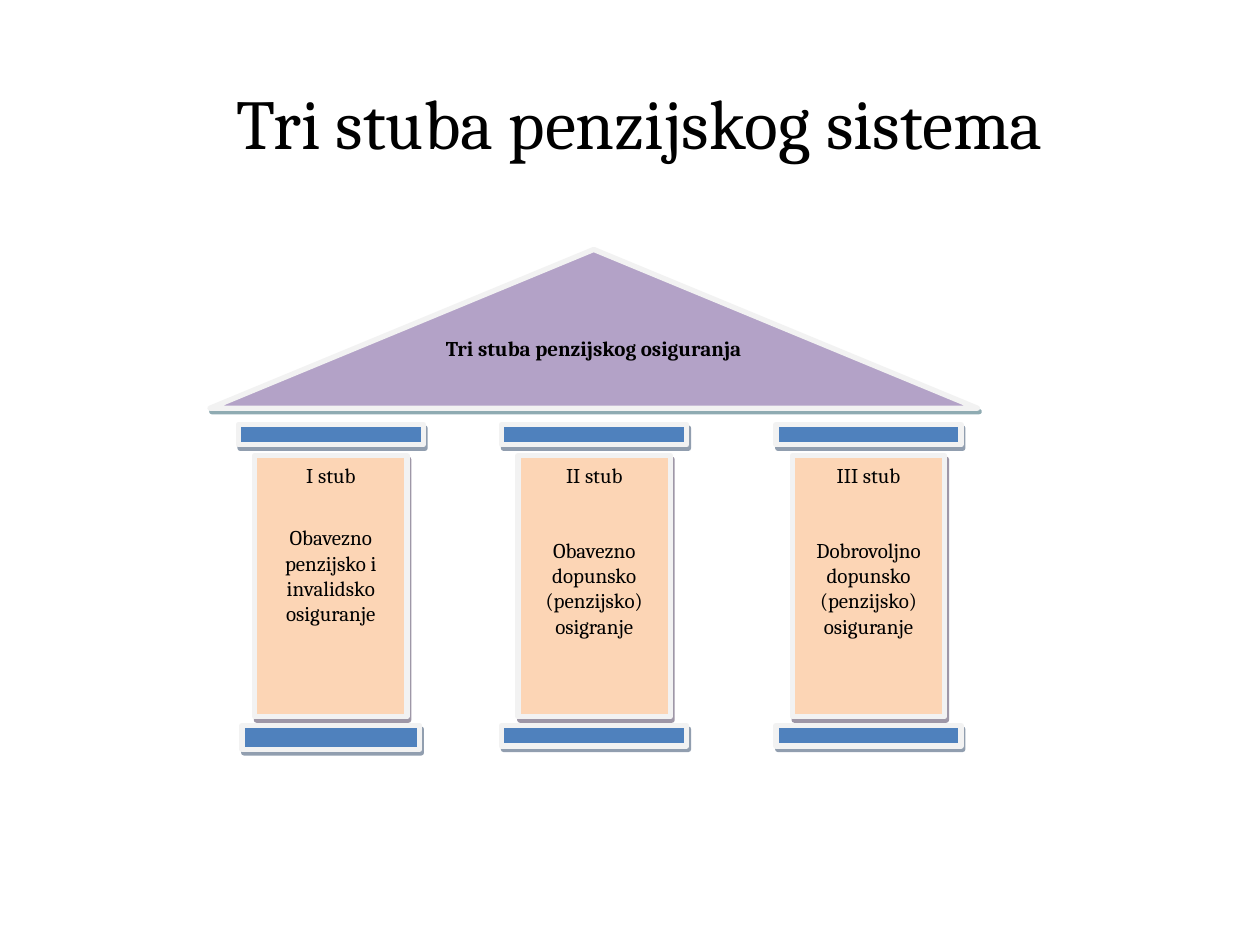
from lxml import etree
from pptx import Presentation
from pptx import util as u
from pptx.dml.color import RGBColor
from pptx.enum import shapes, text
from pptx.oxml import ns

RECT = shapes.MSO_SHAPE.RECTANGLE
ROOF = shapes.MSO_SHAPE.ISOSCELES_TRIANGLE


def color(code):
    return RGBColor.from_string(code)


class Board:
    font = "Cambria"
    ink = "000000"
    edge = "F2F2F2"

    def __init__(self, slide):
        self.slide = slide

    def label(self, frame, lines, size, bold=False, gap=0):
        """Centre the lines, with a gap in points between them."""
        frame.word_wrap = True
        for i, line in enumerate(lines):
            par = frame.add_paragraph() if i else frame.paragraphs[0]
            par.text = line
            par.alignment = text.PP_ALIGN.CENTER
            if i:
                par.space_before = u.Pt(gap)
            par.font.name = self.font
            par.font.size = u.Pt(size)
            par.font.bold = bold
            par.font.color.rgb = color(self.ink)

    def title(self, words, x, y, w, h):
        box = self.slide.shapes.add_textbox(u.Cm(x), u.Cm(y), u.Cm(w), u.Cm(h))
        box.text_frame.vertical_anchor = text.MSO_ANCHOR.MIDDLE
        self.label(box.text_frame, [words], 40)

    def block(self, kind, mid, y, w, h, fill, shade):
        """Add a shape centred on mid, with a hard drop shadow."""
        item = self.slide.shapes.add_shape(
            kind, u.Cm(mid - w / 2), u.Cm(y), u.Cm(w), u.Cm(h))
        item.fill.solid()
        item.fill.fore_color.rgb = color(fill)
        item.line.color.rgb = color(self.edge)
        item.line.width = u.Pt(3)
        item.text_frame.vertical_anchor = text.MSO_ANCHOR.TOP
        self.shadow(item, shade)
        return item

    def shadow(self, item, shade):
        item.shadow.inherit = False
        group = item._element.spPr.find(ns.qn("a:effectLst"))
        drop = etree.SubElement(
            group, ns.qn("a:outerShdw"), blurRad="0", dist=str(u.Pt(2.2)),
            dir=str(63 * 60000), algn="ctr", rotWithShape="0")
        tone = etree.SubElement(drop, ns.qn("a:srgbClr"), val=shade)
        etree.SubElement(tone, ns.qn("a:alpha"), val="50000")

    def slab(self, mid, y, w, h):
        self.block(RECT, mid, y, w, h, "4F81BD", "243F60")

    def pillar(self, mid, lines, gap, base):
        self.slab(mid, 8.56, 3.73, 0.41)
        shaft = self.block(RECT, mid, 9.19, 3.07, 5.26, "FCD5B5", "3F3151")
        self.label(shaft.text_frame, lines, 12, gap=gap)
        self.slab(mid, 14.63, *base)

    def roof(self, words, mid, y, w, h):
        item = self.block(ROOF, mid, y, w, h, "B3A2C7", "205867")
        self.label(item.text_frame, [words], 12, bold=True)


def main():
    deck = Presentation()
    deck.slide_width, deck.slide_height = u.Cm(25.4), u.Cm(19.05)
    board = Board(deck.slides.add_slide(deck.slide_layouts[6]))

    # Title
    board.title("Tri stuba penzijskog sistema", 1.47, 0.86, 22.86, 3.18)

    # Roof
    board.roof("Tri stuba penzijskog osiguranja", 11.97, 5.03, 15.47, 3.2)

    # Pillars: centre, name, scheme, gap, base size
    pillars = [
        (6.67, "I stub", "Obavezno penzijsko i invalidsko osiguranje",
         21.5, (3.58, 0.48)),
        (11.98, "II stub", "Obavezno dopunsko (penzijsko) osigranje",
         28.7, (3.73, 0.41)),
        (17.51, "III stub", "Dobrovoljno dopunsko (penzijsko) osiguranje",
         28.7, (3.73, 0.41)),
    ]
    for mid, name, scheme, gap, base in pillars:
        board.pillar(mid, [name, scheme], gap, base)

    deck.save("out.pptx")


if __name__ == "__main__":
    main()
